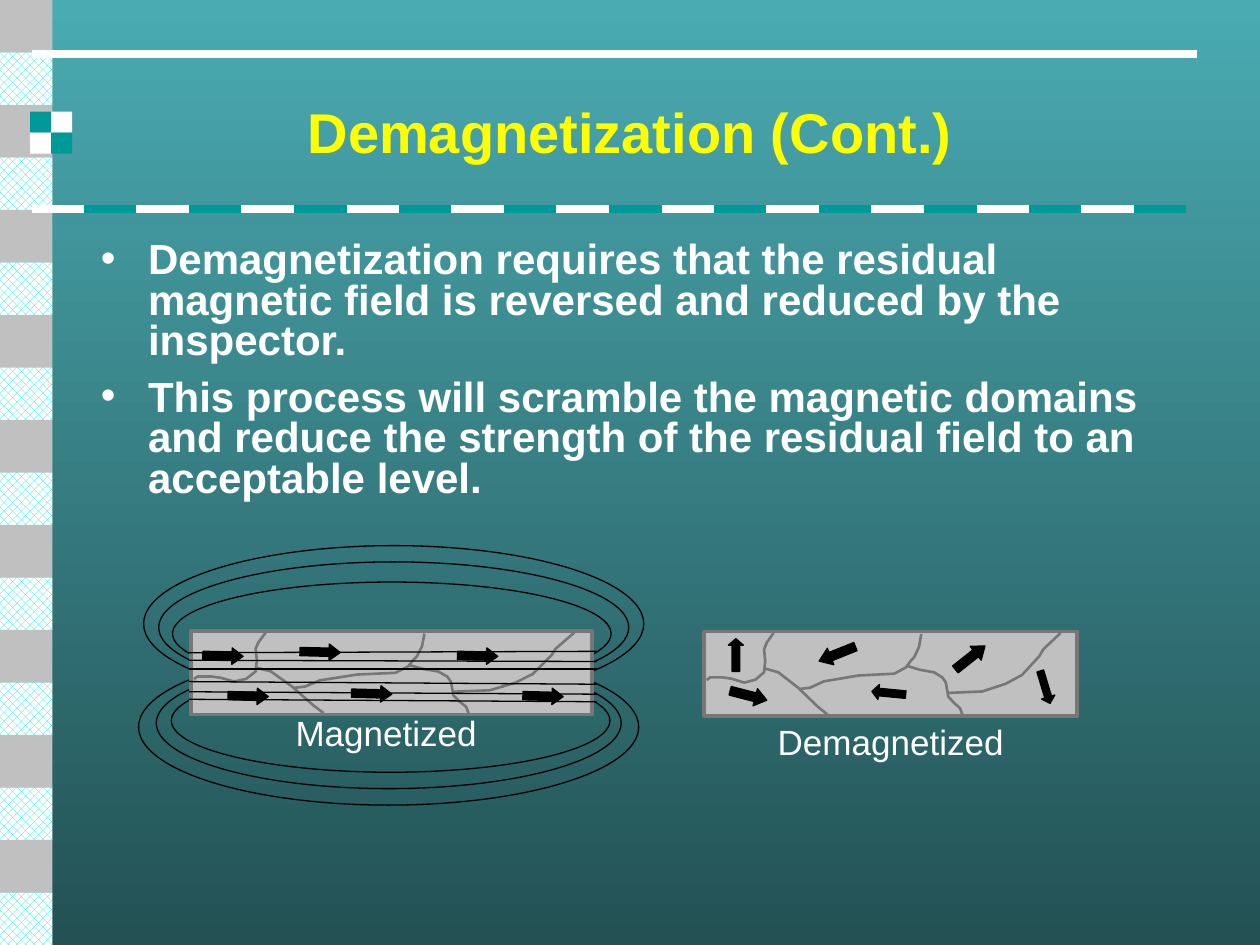
from pptx import Presentation
from pptx.dml.color import RGBColor
from pptx.enum.dml import MSO_PATTERN as Pat
from pptx.enum.shapes import MSO_CONNECTOR as Con, MSO_SHAPE as Geo
from pptx.enum.text import MSO_ANCHOR as Anchor, MSO_AUTO_SIZE as Auto, PP_ALIGN as Align
from pptx.oxml.ns import qn
from pptx.util import Pt
from lxml import etree

WHITE = RGBColor(0xFF, 0xFF, 0xFF)
BLACK = RGBColor(0, 0, 0)
YELLOW = RGBColor(0xFF, 0xFF, 0)
TEAL = RGBColor(0, 0x99, 0x99)
AQUA = RGBColor(0, 0xEE, 0xE8)
SILVER = RGBColor(0xC0, 0xC0, 0xC0)
GRAY = RGBColor(0x77, 0x77, 0x77)
SKY = RGBColor(0x4A, 0xAB, 0xB2)
DEEP = RGBColor(0x23, 0x51, 0x54)

deck = Presentation()
deck.slide_width, deck.slide_height = Pt(720), Pt(540)
slide = deck.slides.add_slide(deck.slide_layouts[1])
shapes = slide.shapes


def add_box(geo, x, y, w, h, fill=None, edge=None, width=0.75):
    box = shapes.add_shape(geo, Pt(x), Pt(y), Pt(w), Pt(h))
    box.shadow.inherit = False
    if fill is None:
        box.fill.background()
    else:
        box.fill.solid()
        box.fill.fore_color.rgb = fill
    if edge is None:
        box.line.fill.background()
    else:
        box.line.color.rgb = edge
        box.line.width = Pt(width)
    return box


def add_line(x1, y1, x2, y2, color, width):
    line = shapes.add_connector(Con.STRAIGHT, Pt(x1), Pt(y1), Pt(x2), Pt(y2))
    line.line.color.rgb = color
    line.line.width = Pt(width)
    etree.SubElement(line._element.spPr, qn("a:effectLst"))


# Background and frame
back = slide.background.fill
back.gradient()
back.gradient_angle = 270
for stop, color in zip(back.gradient_stops, (SKY, DEEP)):
    stop.color.rgb = color

for i in range(18):
    tile = add_box(Geo.RECTANGLE, 0, i * 30, 30, 30, SILVER)
    if i % 2:
        tile.fill.patterned()
        tile.fill.pattern = Pat.PERCENT_50
        tile.fill.fore_color.rgb = AQUA
        tile.fill.back_color.rgb = WHITE

add_line(18, 31, 684, 31, WHITE, 4.5)
for i in range(4):
    row, col = divmod(i, 2)
    add_box(Geo.RECTANGLE, 17.2 + col * 12, 63.8 + row * 12, 12, 12,
            TEAL if row == col else WHITE)
for i in range(22):
    add_line(18 + i * 30, 119.5, 48 + i * 30, 119.5, TEAL if i % 2 else WHITE, 4.5)

# Title and list
title = shapes.title
title.left, title.top, title.width, title.height = Pt(54), Pt(42), Pt(612), Pt(66)
frame = title.text_frame
frame.text = "Demagnetization (Cont.)"
frame.vertical_anchor = Anchor.MIDDLE
frame.auto_size = Auto.NONE
para = frame.paragraphs[0]
para.alignment = Align.CENTER
font = para.font
font.name, font.size, font.bold = "Arial", Pt(32), True
font.color.rgb = YELLOW

body = slide.placeholders[1]
body.left, body.top, body.width, body.height = Pt(50.4), Pt(135), Pt(612), Pt(324)
frame = body.text_frame
frame.text = (
    "Demagnetization requires that the residual magnetic field is reversed "
    "and reduced by the inspector.\n"
    "This process will scramble the magnetic domains and reduce the strength "
    "of the residual field to an acceptable level."
)
frame.auto_size = Auto.NONE
for para in frame.paragraphs:
    para.line_spacing = 0.8
    para.space_before = Pt(9.6)
    font = para.font
    font.name, font.size, font.bold = "Arial", Pt(24), True
    font.color.rgb = WHITE
    props = para._p.get_or_add_pPr()
    props.set("marL", str(Pt(27)))
    props.set("indent", str(Pt(-27)))
    etree.SubElement(props, qn("a:buChar"), char="•")

# Field loops, hidden in part by the left plate
loops = [
    (89.3, 375.8, 265.7, 74.9), (97.9, 382.3, 250.6, 59), (79.2, 370.8, 285.8, 89.3),
    (82.1, 311.8, 285.8, 89.3), (90.7, 321.1, 268.6, 74.9), (98.6, 332.6, 250.6, 59),
]
for loop in loops:
    add_box(Geo.OVAL, *loop, edge=BLACK)

# Plates with domain walls, given from the corner of the wider plate
walls = [
    [(42.5, 0.7), (38.2, 6.5), (36.7, 10.1), (37.4, 16.6), (36.7, 23), (31.4, 27.2),
     (24.5, 28.8), (16.6, 26.6), (11.5, 25.9), (3.6, 25.9), (1.4, 27.4)],
    [(37.4, 20.9), (45.4, 23), (57.6, 31.7), (69.8, 42.5), (75.6, 46.8)],
    [(58.3, 32.4), (64.8, 31.7), (73.4, 28.1), (94.8, 24.8), (116.6, 23.8), (123.8, 20.2),
     (126.7, 16.6), (128.9, 14.4), (131.8, 8.6), (133.2, 1.4)],
    [(124.6, 19.4), (132.5, 21.6), (141.1, 23), (146.2, 25.9), (148.3, 28.8),
     (149.8, 36.7), (153.4, 40.3), (157, 43.2), (158.4, 46.8)],
    [(149.8, 34.6), (170.6, 33.8), (185, 29.5), (195.1, 24.5), (202.3, 17.3),
     (205.9, 13.7), (208.1, 10.1), (218.9, 0.7)],
]
plates = [
    (109.4, 360.7, 229, 47.6, "Magnetized", (121, 403.2, 199.4, 31.7)),
    (402.5, 360.9, 213.1, 48.2, "Demagnetized", (396.7, 408.2, 224.6, 31)),
]
for left, top, wide, high, label, spot in plates:
    add_box(Geo.RECTANGLE, left, top, wide, high, SILVER, GRAY, 2.25)
    for wall in walls:
        dots = [(Pt(left + x * wide / 229), Pt(top + y * high / 47.6)) for x, y in wall]
        pen = shapes.build_freeform(*dots[0])
        pen.add_line_segments(dots[1:], close=False)
        crack = pen.convert_to_shape()
        crack.shadow.inherit = False
        crack.fill.background()
        crack.line.color.rgb = GRAY
        crack.line.width = Pt(1.5)
    note = shapes.add_textbox(*map(Pt, spot))
    note.text_frame.word_wrap = True
    note.text_frame.text = label
    para = note.text_frame.paragraphs[0]
    para.alignment = Align.CENTER
    para.font.name, para.font.size = "Arial", Pt(20)
    para.font.color.rgb = WHITE

# Domain arrows: aligned on the left, scattered on the right
spots = [(115.9, 370.1), (130.3, 393.1), (171.4, 367.9),
         (200.9, 391.7), (261.4, 370.1), (298.8, 393.1)]
arrows = [(Geo.RIGHT_ARROW, x, y, 23, 9.4, 1.4, 0.67) for x, y in spots] + [
    (Geo.RIGHT_ARROW, 416.9, 392.4, 21.6, 10.1, 14.4, 0.67),
    (Geo.UP_ARROW, 416.2, 365, 8.6, 18.7, 0, 0.43),
    (Geo.LEFT_ARROW, 467.3, 368.6, 22.3, 10.1, 338.2, 0.7),
    (Geo.DOWN_ARROW, 593.3, 383, 7.9, 19.4, 343.1, 0.48),
    (Geo.UP_ARROW, 503.6, 386.3, 8.6, 19.4, 275.5, 0.46),
    (Geo.RIGHT_ARROW, 543.6, 370.8, 21.6, 10.1, 321.6, 0.67),
]
for geo, x, y, w, h, turn, head in arrows:
    arrow = add_box(geo, x, y, w, h, BLACK, BLACK)
    arrow.rotation = turn
    arrow.adjustments[1] = head

# Field lines through the left plate
for start, end in [(373, 372.2), (377.3, 378), (382.3, 382.3),
                   (389.5, 391), (395.3, 396.7), (399.6, 401)]:
    add_line(108, start, 340.9, end, BLACK, 0.75)

deck.save("out.pptx")
